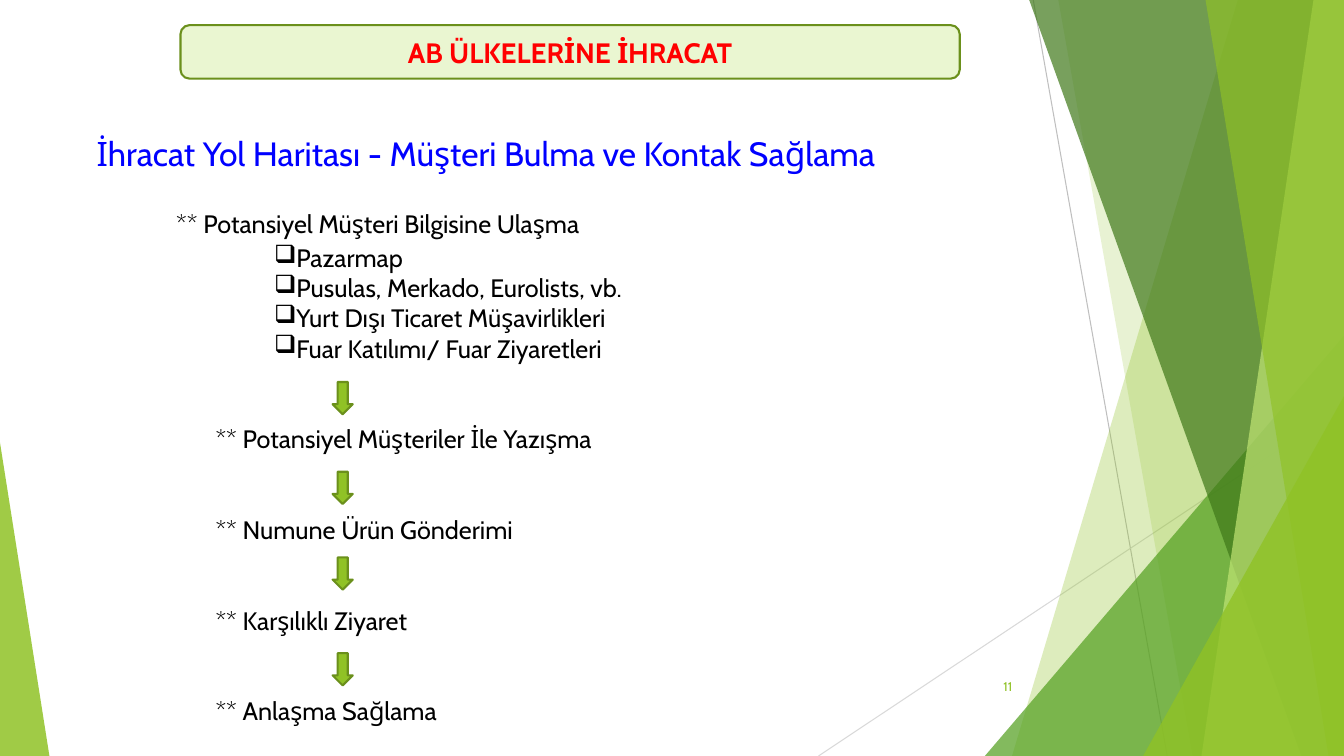
from dataclasses import dataclass

from lxml.etree import SubElement
from pptx import Presentation
from pptx.dml.color import RGBColor
from pptx.enum.shapes import MSO_CONNECTOR as Connector, MSO_SHAPE as Preset
from pptx.enum.text import MSO_ANCHOR as Anchor, PP_ALIGN as Align
from pptx.oxml.ns import qn
from pptx.shapes.autoshape import Shape
from pptx.slide import Slide
from pptx.text.text import TextFrame
from pptx.util import Inches, Pt

WIDTH, HEIGHT = Inches(13.333), Inches(7.5)
FONT = "Cabin"
COLORS = {
    "green": "90C226", "mid_green": "54A021", "dark_green": "3F7819",
    "pale_green": "C0E474", "banner": "EAF6D1", "outline": "6B901C",
    "grey": "BFBFBF", "light_grey": "D9D9D9",
    "red": "FF0000", "blue": "0000FF", "black": "000000",
}


# All positions and sizes are percentages of the slide's width or height.
@dataclass(frozen=True)
class Box:
    left: float
    top: float
    width: float
    height: float

    def emu(self) -> tuple[int, int, int, int]:
        return across(self.left), down(self.top), across(self.width), down(self.height)


@dataclass(frozen=True)
class Ray:
    start: tuple[float, float]
    end: tuple[float, float]
    color: str


@dataclass(frozen=True)
class Slab:
    """Full-height band from a slanted left edge to the slide's right edge."""
    top_x: float
    bottom_x: float
    color: str
    opacity: int


@dataclass(frozen=True)
class Wedge:
    """Triangle standing on the slide's bottom edge, apex at a share of its width."""
    left: float
    right: float
    top: float
    apex: float
    color: str
    opacity: int


RAYS = [
    Ray((76.88, 0), (86.85, 100), "grey"),
    Ray((100, 53.73), (60.9, 100), "light_grey"),
]
FACETS = [
    Slab(92.1, 75.3, "green", 30),
    Slab(78.75, 88.73, "green", 20),
    Wedge(73.28, 100, 44.4, 1, "mid_green", 72),
    Slab(76.58, 96.83, "dark_green", 70),
    Slab(97.73, 89.4, "pale_green", 70),
    Slab(89.7, 98.85, "green", 65),
    Wedge(85.05, 100, 52.4, 1, "green", 80),
    Wedge(0, 3.68, 58.53, 0, "green", 85),
]
SOURCES = [
    "Pazarmap", "Pusulas, Merkado, Eurolists, vb.",
    "Yurt Dışı Ticaret Müşavirlikleri", "Fuar Katılımı/ Fuar Ziyaretleri",
]
STEPS = [
    "** Potansiyel Müşteriler İle Yazışma", "** Numune Ürün Gönderimi",
    "** Karşılıklı Ziyaret", "** Anlaşma Sağlama",
]
ARROW_TOPS = [50.53, 62.4, 73.73, 86.4]


def across(percent: float) -> int:
    return round(WIDTH * percent / 100)


def down(percent: float) -> int:
    return round(HEIGHT * percent / 100)


def rgb(color: str) -> RGBColor:
    return RGBColor.from_string(COLORS[color])


def paint(shape: Shape, color: str, opacity: int = 100, outline: str | None = None) -> None:
    shape.shadow.inherit = False
    shape.fill.solid()
    shape.fill.fore_color.rgb = rgb(color)
    if opacity < 100:
        tint = shape.fill._xPr.find(qn("a:solidFill"))[0]
        SubElement(tint, qn("a:alpha"), val=str(opacity * 1000))
    if outline:
        shape.line.color.rgb = rgb(outline)
        shape.line.width = Pt(1.5)
    else:
        shape.line.fill.background()


def add_preset(slide: Slide, preset: Preset, box: Box, color: str, **paint_format) -> Shape:
    shape = slide.shapes.add_shape(preset, *box.emu())
    paint(shape, color, **paint_format)
    return shape


def add_ray(slide: Slide, ray: Ray) -> None:
    (start_x, start_y), (end_x, end_y) = ray.start, ray.end
    line = slide.shapes.add_connector(
        Connector.STRAIGHT, across(start_x), down(start_y), across(end_x), down(end_y))
    line.line.color.rgb = rgb(ray.color)
    line.line.width = Pt(0.75)
    SubElement(line._element.spPr, qn("a:effectLst"))


def add_facet(slide: Slide, facet: Slab | Wedge) -> None:
    if isinstance(facet, Wedge):
        box = Box(facet.left, facet.top, facet.right - facet.left, 100 - facet.top)
        shape = add_preset(slide, Preset.ISOSCELES_TRIANGLE, box, facet.color,
                           opacity=facet.opacity)
        shape.adjustments[0] = facet.apex
        return
    builder = slide.shapes.build_freeform(across(facet.top_x), 0)
    builder.add_line_segments([(WIDTH, 0), (WIDTH, HEIGHT), (across(facet.bottom_x), HEIGHT)])
    paint(builder.convert_to_shape(), facet.color, facet.opacity)


def add_text_box(slide: Slide, box: Box, anchor: Anchor = Anchor.TOP) -> TextFrame:
    frame = slide.shapes.add_textbox(*box.emu()).text_frame
    frame.word_wrap = True
    frame.vertical_anchor = anchor
    return frame


def write(frame: TextFrame, text: str, *, size: float = 18, color: str = "black",
          bold: bool = False, align: Align = Align.LEFT, spacing: float = 1,
          before: float = 0, after: float = 0, margin: float = 0,
          indent: float = 0, bullet: str = "") -> None:
    """Fill the frame's empty first paragraph, or append one; margins are in inches."""
    paragraph = frame.paragraphs[0] if not frame.text else frame.add_paragraph()
    paragraph.alignment = align
    paragraph.line_spacing = spacing
    paragraph.space_before, paragraph.space_after = Pt(before), Pt(after)
    properties = paragraph._p.get_or_add_pPr()
    properties.set("marL", str(Inches(margin)))
    properties.set("indent", str(Inches(indent)))
    if bullet:
        SubElement(properties, qn("a:buChar"), char=bullet)
    run = paragraph.add_run()
    run.text = text
    run.font.name, run.font.size, run.font.bold = FONT, Pt(size), bold
    run.font.color.rgb = rgb(color)


def add_road_map(slide: Slide) -> None:
    body = add_text_box(slide, Box(6.45, 14.27, 66, 83.47))
    write(body, "İhracat Yol Haritası - Müşteri Bulma ve Kontak Sağlama",
          size=24, color="blue", spacing=1.5)
    write(body, "** Potansiyel Müşteri Bilgisine Ulaşma",
          spacing=1.5, before=14, after=2.8, margin=0.79)
    for source in SOURCES:
        write(body, source, margin=1.37, indent=0.39, bullet="❑")
    for step in STEPS:
        write(body, step, before=43.2, margin=1.37, indent=-0.19)
    for top in ARROW_TOPS:
        add_preset(slide, Preset.DOWN_ARROW, Box(24.75, top, 1.5, 4.27), "green",
                   outline="outline")


def main() -> None:
    presentation = Presentation()
    presentation.slide_width, presentation.slide_height = WIDTH, HEIGHT
    slide = presentation.slides.add_slide(presentation.slide_layouts[6])
    for ray in RAYS:
        add_ray(slide, ray)
    for facet in FACETS:
        add_facet(slide, facet)
    number = add_text_box(slide, Box(70.43, 88.13, 5.63, 5.33), Anchor.MIDDLE)
    write(number, "11", size=9, color="green", align=Align.RIGHT)
    banner = add_preset(slide, Preset.ROUNDED_RECTANGLE, Box(13.43, 3.33, 57.98, 7.07),
                        "banner", outline="outline")
    write(banner.text_frame, "AB ÜLKELERİNE İHRACAT", size=20, color="red", bold=True,
          align=Align.CENTER)
    add_road_map(slide)
    presentation.save("out.pptx")


if __name__ == "__main__":
    main()
